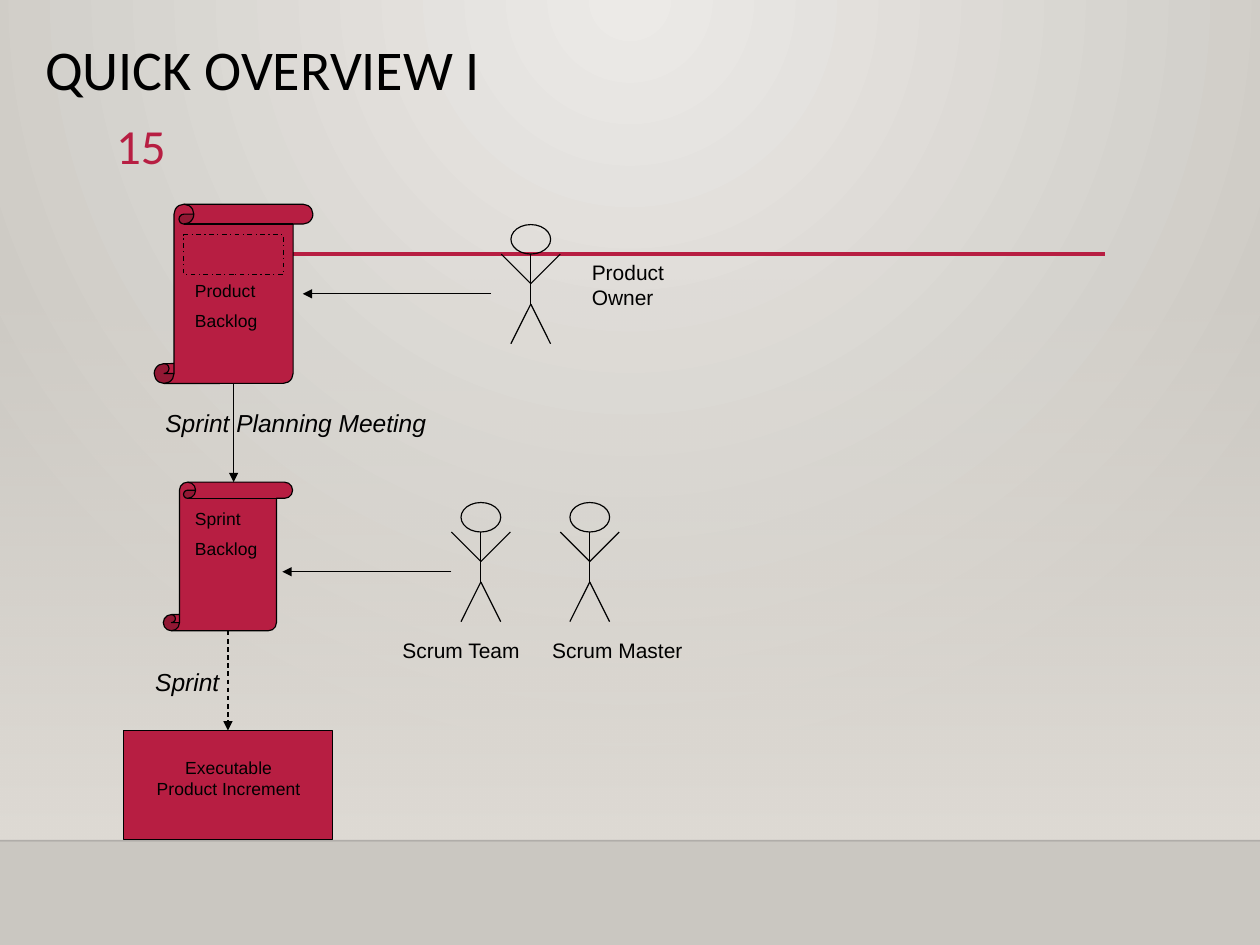
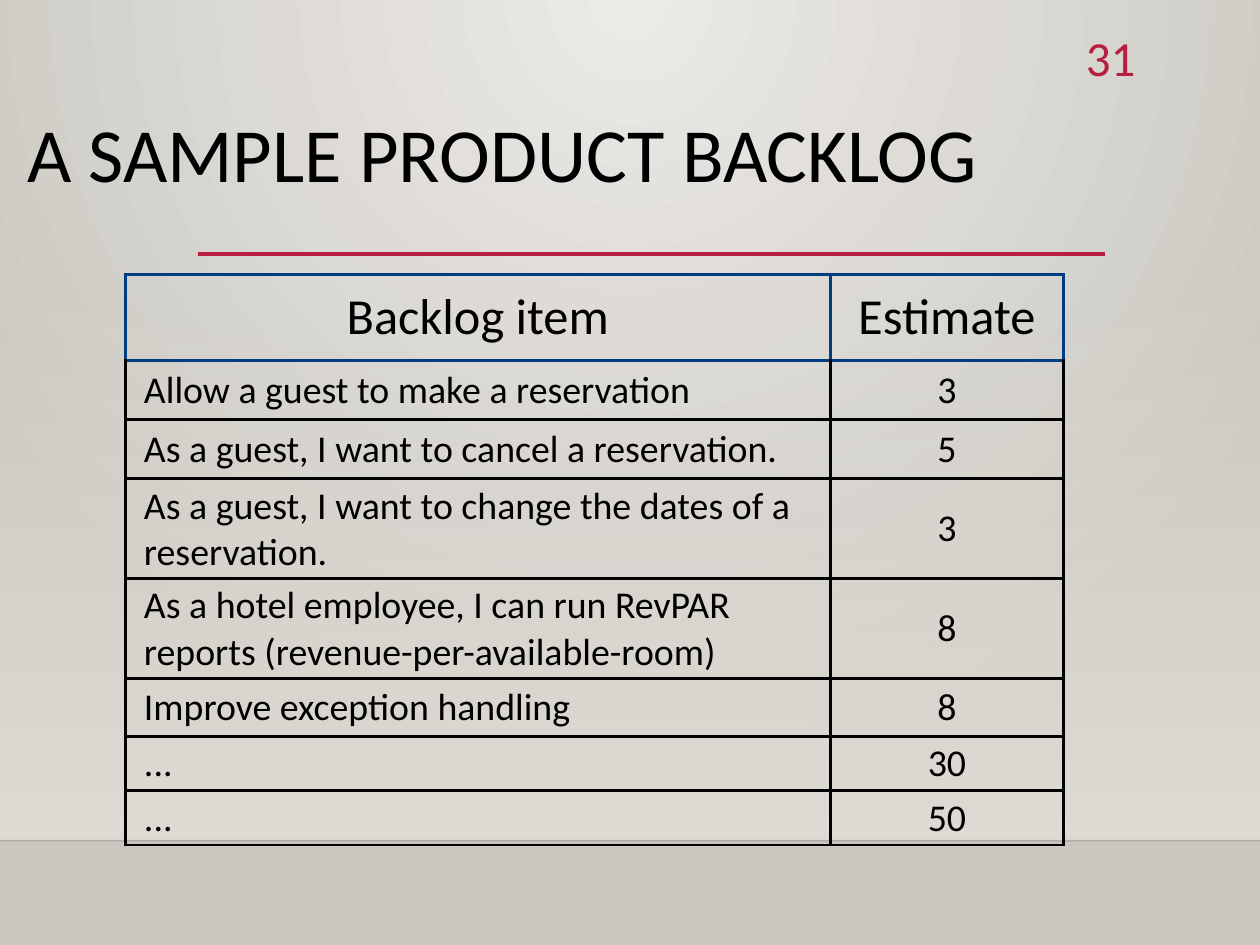
from dataclasses import dataclass
from typing import Any, Optional

from lxml import etree
from pptx import Presentation
from pptx import util as u
from pptx.dml.color import RGBColor
from pptx.enum import dml, shapes, text
from pptx.oxml import ns

In = u.Inches
Align = text.PP_ALIGN


@dataclass(frozen=True)
class Theme:
    black: str = "000000"
    accent: str = "B71E42"
    header_border: str = "003C83"
    glow: str = "ECEAE7"
    backdrop: str = "CAC7C1"
    floor: str = "DFDBD5"
    floor_line: str = "000001"
    title_font: str = "Calibri"
    label_font: str = "Arial"
    number_size: float = 31.1
    header_size: float = 32
    cell_size: float = 24
    role_size: float = 13.3
    box_size: float = 11.1
    step_size: float = 15.6
    outline: float = 0.75
    rule: float = 2.5
    border: float = 2


@dataclass(frozen=True)
class Box:
    left: float
    top: float
    width: float
    height: float

    def emu(self) -> list[u.Length]:
        return [In(v) for v in (self.left, self.top, self.width, self.height)]


@dataclass(frozen=True)
class Style:
    size: float
    font: str
    color: str = Theme.black
    italic: bool = False
    align: Align = Align.LEFT
    line_spacing: Optional[float] = None


@dataclass(frozen=True)
class Label:
    box: Box
    lines: tuple[str, ...]
    style: Style


@dataclass(frozen=True)
class Line:
    x1: float
    y1: float
    x2: float
    y2: float
    dash: Optional[dml.MSO_LINE] = None


T = Theme()
WIDTH, HEIGHT = 11.11, 8.33
FLOOR_TOP, FLOOR_BOTTOM = 2.45, 7.41

ROLE = Style(T.role_size, T.label_font)
BOX = Style(T.box_size, T.label_font)
BOX_CENTERED = Style(T.box_size, T.label_font, align=Align.CENTER)
STEP = Style(T.step_size, T.label_font, italic=True)
NUMBER = Style(T.number_size, T.title_font, T.accent, align=Align.RIGHT)


def rgb(color: str) -> RGBColor:
    return RGBColor.from_string(color)


def sub(parent: Any, tag: str, **attrs: str) -> Any:
    return etree.SubElement(parent, ns.qn(tag), attrs)


# Text

def add_run(p: Any, content: str, style: Style) -> None:
    p.alignment = style.align
    if style.line_spacing:
        p.line_spacing = style.line_spacing
    r = p.add_run()
    r.text = content
    f = r.font
    f.size, f.name, f.italic = u.Pt(style.size), style.font, style.italic
    f.color.rgb = rgb(style.color)


def add_label(slide: Any, label: Label) -> None:
    tf = slide.shapes.add_textbox(*label.box.emu()).text_frame
    tf.word_wrap = True
    for i, content in enumerate(label.lines):
        p = tf.add_paragraph() if i else tf.paragraphs[0]
        if i:
            p.space_before = u.Pt(label.style.size / 2)
        add_run(p, content, label.style)


# Shapes and lines

def add_box(parent: Any, kind: shapes.MSO_SHAPE, box: Box,
            fill: Optional[str] = None) -> Any:
    sp = parent.shapes.add_shape(kind, *box.emu())
    sp.shadow.inherit = False
    if fill:
        sp.fill.solid()
        sp.fill.fore_color.rgb = rgb(fill)
    else:
        sp.fill.background()
    sp.line.color.rgb = rgb(T.black)
    sp.line.width = u.Pt(T.outline)
    return sp


def add_line(parent: Any, line: Line, color: str = T.black,
             width: float = T.outline, arrow: bool = False) -> Any:
    c = parent.shapes.add_connector(
        shapes.MSO_CONNECTOR.STRAIGHT,
        In(line.x1), In(line.y1), In(line.x2), In(line.y2))
    c.line.color.rgb = rgb(color)
    c.line.width = u.Pt(width)
    if line.dash:
        c.line.dash_style = line.dash
    sp_pr = c._element.spPr
    if arrow:
        sub(sp_pr.find(ns.qn("a:ln")), "a:tailEnd", type="triangle")
    sub(sp_pr, "a:effectLst")
    return c


def add_person(slide: Any, x: float, top: float) -> None:
    """Draw a stick figure centred on x."""
    person = slide.shapes.add_group_shape()
    neck, chest, hip, foot = (top + d for d in (0.26, 0.52, 0.7, 1.05))
    add_box(person, shapes.MSO_SHAPE.OVAL, Box(x - 0.175, top, 0.35, 0.26))
    add_line(person, Line(x, neck, x, hip))
    for side in (-1, 1):
        add_line(person, Line(x, hip, x + side * 0.175, foot))
        add_line(person, Line(x + side * 0.26, neck, x, chest))


# Shared slide frame

def set_gradient(fill: Any, start: str, end: str) -> Any:
    fill.gradient()
    for stop, color in zip(fill.gradient_stops, (start, end)):
        stop.color.rgb = rgb(color)
    for stop, position in zip(fill.gradient_stops, (0, 1)):
        stop.position = position
    return fill


def set_alpha(element: Any, percent: int) -> None:
    color = next(element.iter(ns.qn("a:srgbClr")))
    sub(color, "a:alpha", val=str(percent * 1000))


def add_slide(prs: Any, title: Label, number: Label) -> Any:
    slide = prs.slides.add_slide(prs.slide_layouts[6])

    # Radial backdrop, lit from the top centre
    set_gradient(slide.background.fill, T.glow, T.backdrop)
    grad = next(slide._element.iter(ns.qn("a:gradFill")))
    for lin in grad.findall(ns.qn("a:lin")):
        grad.remove(lin)
    radial = etree.Element(ns.qn("a:path"), {"path": "circle"})
    sub(radial, "a:fillToRect", l="43000", t="0", r="43000", b="100000")
    grad.find(ns.qn("a:gsLst")).addnext(radial)

    # Floor fading in towards its lower edge
    floor = add_box(slide, shapes.MSO_SHAPE.RECTANGLE,
                    Box(0, FLOOR_TOP, WIDTH, FLOOR_BOTTOM - FLOOR_TOP))
    floor.line.fill.background()
    set_gradient(floor.fill, T.floor, T.floor).gradient_angle = 270
    set_alpha(floor._element.spPr.find(ns.qn("a:gradFill")), 0)

    # Floor edge and title rule
    edge = add_line(slide, Line(0, FLOOR_BOTTOM, WIDTH, FLOOR_BOTTOM),
                    T.floor_line, 1)
    set_alpha(edge._element.spPr, 20)
    add_line(slide, Line(1.75, 2.24, 9.74, 2.24), T.accent, T.rule)

    add_label(slide, title)
    add_label(slide, number)
    return slide


def title_label(box: Box, content: str, size: float) -> Label:
    return Label(box, (content,), Style(size, T.title_font, line_spacing=0.9))


def number_label(left: float, top: float, content: str) -> Label:
    return Label(Box(left, top, 0.97, 0.61), (content,), NUMBER)


# Slide: overview

OVERVIEW_LABELS = (
    Label(Box(5.12, 2.24, 1.4, 0.55), ("Product Owner",), ROLE),
    Label(Box(4.77, 5.57, 1.4, 0.32), ("Scrum Master",), ROLE),
    Label(Box(3.45, 5.57, 1.4, 0.32), ("Scrum Team",), ROLE),
    Label(Box(1.62, 2.42, 0.88, 0.57), ("Product", "Backlog"), BOX),
    Label(Box(1.62, 4.43, 0.79, 0.57), ("Sprint", "Backlog"), BOX),
    Label(Box(1.27, 6.62, 1.49, 0.48), ("Executable Product Increment",),
          BOX_CENTERED),
    Label(Box(1.27, 5.83, 1.4, 0.36), ("Sprint",), STEP),
    Label(Box(1.36, 3.55, 3.59, 0.36), ("Sprint Planning Meeting",), STEP),
)
PEOPLE = ((4.68, 1.98), (5.2, 4.43), (4.24, 4.43))


def build_overview(prs: Any) -> None:
    slide = add_slide(
        prs,
        title_label(Box(0.3, 0.32, 7.87, 1.39), "QUICK OVERVIEW I", 35.6),
        number_label(0.59, 0.97, "15"))
    kind = shapes.MSO_SHAPE

    # Backlogs and increment
    product = add_box(slide, kind.VERTICAL_SCROLL,
                      Box(1.36, 1.8, 1.4, 1.58), T.accent)
    sprint = add_box(slide, kind.VERTICAL_SCROLL,
                     Box(1.44, 4.25, 1.14, 1.31), T.accent)
    increment = add_box(slide, kind.FLOWCHART_PROCESS,
                        Box(1.09, 6.44, 1.84, 0.96), T.accent)
    selection = add_box(slide, kind.RECTANGLE,
                        Box(1.62, 2.07, 0.88, 0.35), T.accent)
    selection.line.dash_style = dml.MSO_LINE.DASH_DOT

    for x, top in PEOPLE:
        add_person(slide, x, top)

    # Flow arrows
    build = add_line(slide, Line(2.01, 5.56, 2.01, 6.44, dml.MSO_LINE.DASH),
                     arrow=True)
    build.begin_connect(sprint, 2)
    build.end_connect(increment, 0)
    plan = add_line(slide, Line(2.06, 3.38, 2.06, 4.25), arrow=True)
    plan.begin_connect(product, 2)
    for line in (Line(4.33, 2.59, 2.67, 2.59), Line(3.98, 5.04, 2.49, 5.04)):
        add_line(slide, line, arrow=True)

    for label in OVERVIEW_LABELS:
        add_label(slide, label)


# Slide: sample backlog

BACKLOG = (
    ("Backlog item", "Estimate", 0.76),
    ("Allow a guest to make a reservation", "3", 0.52),
    ("As a guest, I want to cancel a reservation.", "5", 0.52),
    ("As a guest, I want to change the dates of a reservation.", "3", 0.85),
    ("As a hotel employee, I can run RevPAR reports "
     "(revenue-per-available-room)", "8", 0.85),
    ("Improve exception handling", "8", 0.51),
    ("...", "30", 0.48),
    ("...", "50", 0.48),
)
COLUMNS = (6.21, 2.06)


def set_borders(cell: Any, color: str, top_color: str) -> None:
    tc_pr = cell._tc.get_or_add_tcPr()
    for i, side in enumerate("LRTB"):
        ln = etree.Element(ns.qn(f"a:ln{side}"), {"w": str(u.Pt(T.border))})
        solid = sub(ln, "a:solidFill")
        sub(solid, "a:srgbClr", val=top_color if side == "T" else color)
        tc_pr.insert(i, ln)


def build_backlog(prs: Any) -> None:
    slide = add_slide(
        prs,
        title_label(Box(0.14, 0.98, 10.08, 1.27),
                    "A SAMPLE PRODUCT BACKLOG", 48.6),
        number_label(9.14, 0.19, "31"))
    box = Box(1.11, 2.42, sum(COLUMNS), sum(row[2] for row in BACKLOG))
    table = slide.shapes.add_table(len(BACKLOG), len(COLUMNS),
                                   *box.emu()).table
    table.first_row = table.horz_banding = False
    for column, width in zip(table.columns, COLUMNS):
        column.width = In(width)

    for i, (item, estimate, height) in enumerate(BACKLOG):
        table.rows[i].height = In(height)
        size = T.cell_size if i else T.header_size
        for j, content in enumerate((item, estimate)):
            cell = table.cell(i, j)
            cell.fill.background()
            cell.vertical_anchor = text.MSO_ANCHOR.MIDDLE
            cell.margin_left = cell.margin_right = In(0.04)
            cell.margin_top = cell.margin_bottom = In(0.04)
            set_borders(cell, T.black if i else T.header_border,
                        T.black if i > 1 else T.header_border)
            p = cell.text_frame.paragraphs[0]
            indented = i > 0 and j == 0
            if indented:
                p._p.get_or_add_pPr().set("marL", str(In(0.12)))
            add_run(p, content, Style(
                size, T.title_font,
                align=Align.LEFT if indented else Align.CENTER))


def main() -> None:
    prs = Presentation()
    prs.slide_width, prs.slide_height = In(WIDTH), In(HEIGHT)
    build_overview(prs)
    build_backlog(prs)
    prs.save("out.pptx")


if __name__ == "__main__":
    main()
